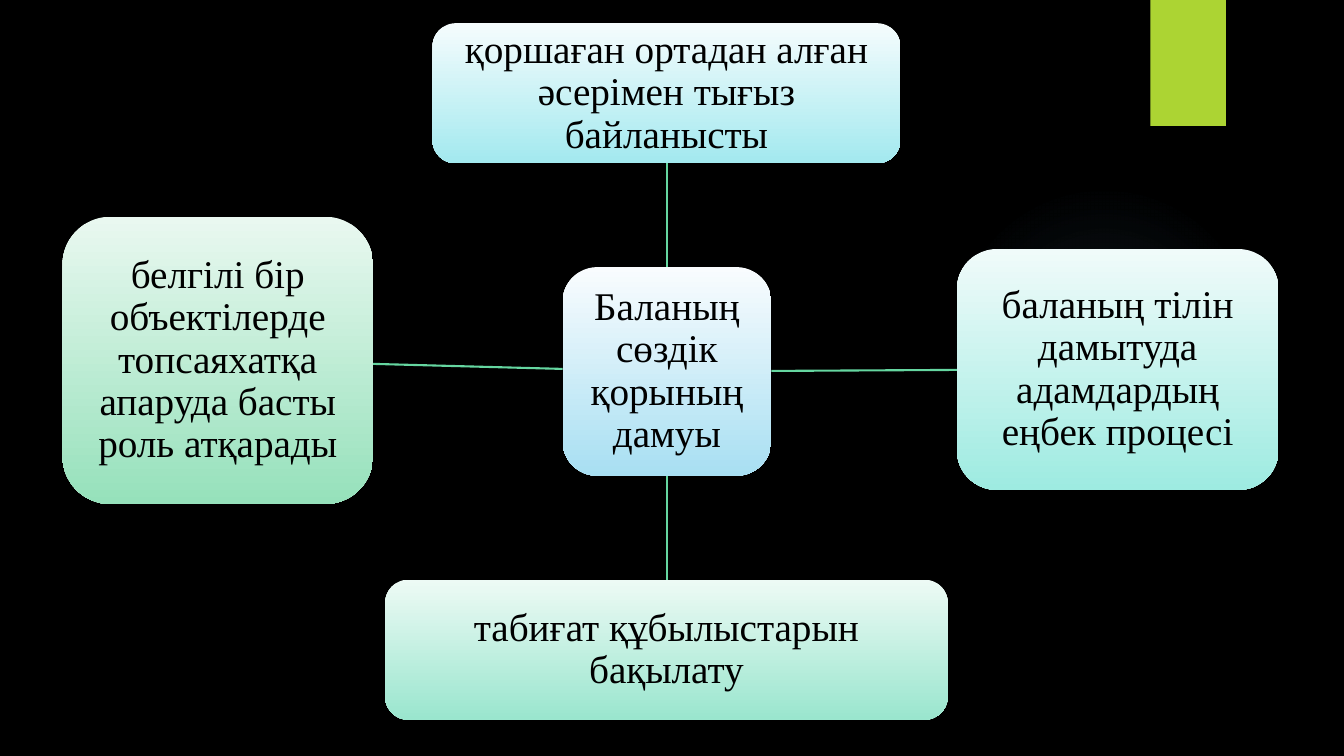
from dataclasses import dataclass

from lxml import etree
from pptx import Presentation
from pptx.dml.color import RGBColor
from pptx.enum.shapes import MSO_CONNECTOR, MSO_SHAPE
from pptx.enum.text import MSO_ANCHOR, PP_ALIGN
from pptx.oxml import parse_xml
from pptx.oxml.ns import nsdecls, qn
from pptx.util import Pt

PX = 9144
SLIDE_WIDTH, SLIDE_HEIGHT = 1333, 750
BLANK_LAYOUT = 6
STRAIGHT = MSO_CONNECTOR.STRAIGHT
RECTANGLE, ROUNDED, OVAL = (
    MSO_SHAPE.RECTANGLE, MSO_SHAPE.ROUNDED_RECTANGLE, MSO_SHAPE.OVAL)
MIDDLE, CENTER = MSO_ANCHOR.MIDDLE, PP_ALIGN.CENTER

FONT = "Times New Roman"
BLACK, LIME, SPOKE_GREEN, GLOW_BLUE = "000000", "ACD433", "65D6A0", "7AC4F0"
GLOW_STOPS = ((0, 7), (36, 6), (69, 0))
TEXT_INSET = 8


@dataclass(frozen=True)
class Topic:
    text: str
    left: int
    top: int
    width: int
    height: int
    top_color: str
    bottom_color: str


@dataclass(frozen=True)
class Spoke:
    x1: int
    y1: int
    x2: int
    y2: int


TOPICS = (
    Topic("Баланың сөздік қорының дамуы",
          558, 265, 207, 207, "F9FCFE", "A8DFF2"),
    Topic("қоршаған ортадан алған әсерімен тығыз байланысты",
          429, 23, 464, 139, "F5FCFD", "A3E9EF"),
    Topic("баланың тілін дамытуда адамдардың еңбек процесі",
          949, 247, 319, 239, "F0FBFA", "9EEBE1"),
    Topic("табиғат құбылыстарын бақылату",
          382, 575, 558, 139, "EDFAF5", "9AE6CE"),
    Topic("белгілі бір объектілерде топсаяхатқа апаруда басты роль атқарады",
          62, 215, 308, 285, "E9F8F0", "96E1BB"),
)
SPOKES = (
    Spoke(662, 265, 662, 162),
    Spoke(765, 368, 949, 367),
    Spoke(662, 472, 662, 575),
    Spoke(558, 366, 370, 361),
)


def rgb(color: str) -> RGBColor:
    return RGBColor.from_string(color)


def add_panel(slide, kind, left: int, top: int, width: int, height: int):
    panel = slide.shapes.add_shape(
        kind, left * PX, top * PX, width * PX, height * PX)
    panel.shadow.inherit = False
    panel.line.fill.background()
    return panel


def add_glow(slide) -> None:
    glow = add_panel(slide, OVAL, 941, 183, 308, 308)
    stops = "".join(
        f'<a:gs pos="{position * 1000}"><a:srgbClr val="{GLOW_BLUE}">'
        f'<a:alpha val="{opacity * 1000}"/></a:srgbClr></a:gs>'
        for position, opacity in GLOW_STOPS)
    gradient = parse_xml(
        f'<a:gradFill {nsdecls("a")}><a:gsLst>{stops}</a:gsLst>'
        '<a:path path="circle"><a:fillToRect l="50000" t="50000" '
        'r="50000" b="50000"/></a:path></a:gradFill>')
    glow.element.spPr.find(qn("a:prstGeom")).addnext(gradient)


def add_accent(slide) -> None:
    accent = add_panel(slide, RECTANGLE, 1141, 0, 75, 125)
    accent.fill.solid()
    accent.fill.fore_color.rgb = rgb(LIME)


def add_spoke(slide, spoke: Spoke) -> None:
    connector = slide.shapes.add_connector(
        STRAIGHT, spoke.x1 * PX, spoke.y1 * PX, spoke.x2 * PX, spoke.y2 * PX)
    connector.line.color.rgb = rgb(SPOKE_GREEN)
    connector.line.width = Pt(1.5)
    etree.SubElement(connector.element.spPr, qn("a:effectLst"))


def add_topic(slide, topic: Topic) -> None:
    box = add_panel(
        slide, ROUNDED, topic.left, topic.top, topic.width, topic.height)
    box.fill.gradient()
    box.fill.gradient_angle = 270
    for stop, color in zip(box.fill.gradient_stops,
                           (topic.top_color, topic.bottom_color)):
        stop.color.rgb = rgb(color)

    frame = box.text_frame
    frame.word_wrap = True
    frame.vertical_anchor = MIDDLE
    frame.margin_left = frame.margin_right = TEXT_INSET * PX
    frame.margin_top = frame.margin_bottom = TEXT_INSET * PX
    paragraph = frame.paragraphs[0]
    paragraph.alignment = CENTER
    paragraph.line_spacing = 0.9
    run = paragraph.add_run()
    run.text = topic.text
    run.font.name = FONT
    run.font.size = Pt(28)
    run.font.color.rgb = rgb(BLACK)


def main() -> None:
    deck = Presentation()
    deck.slide_width = SLIDE_WIDTH * PX
    deck.slide_height = SLIDE_HEIGHT * PX
    slide = deck.slides.add_slide(deck.slide_layouts[BLANK_LAYOUT])
    slide.background.fill.solid()
    slide.background.fill.fore_color.rgb = rgb(BLACK)

    add_glow(slide)
    add_accent(slide)
    for spoke in SPOKES:
        add_spoke(slide, spoke)
    for topic in TOPICS:
        add_topic(slide, topic)
    deck.save("out.pptx")


if __name__ == "__main__":
    main()
